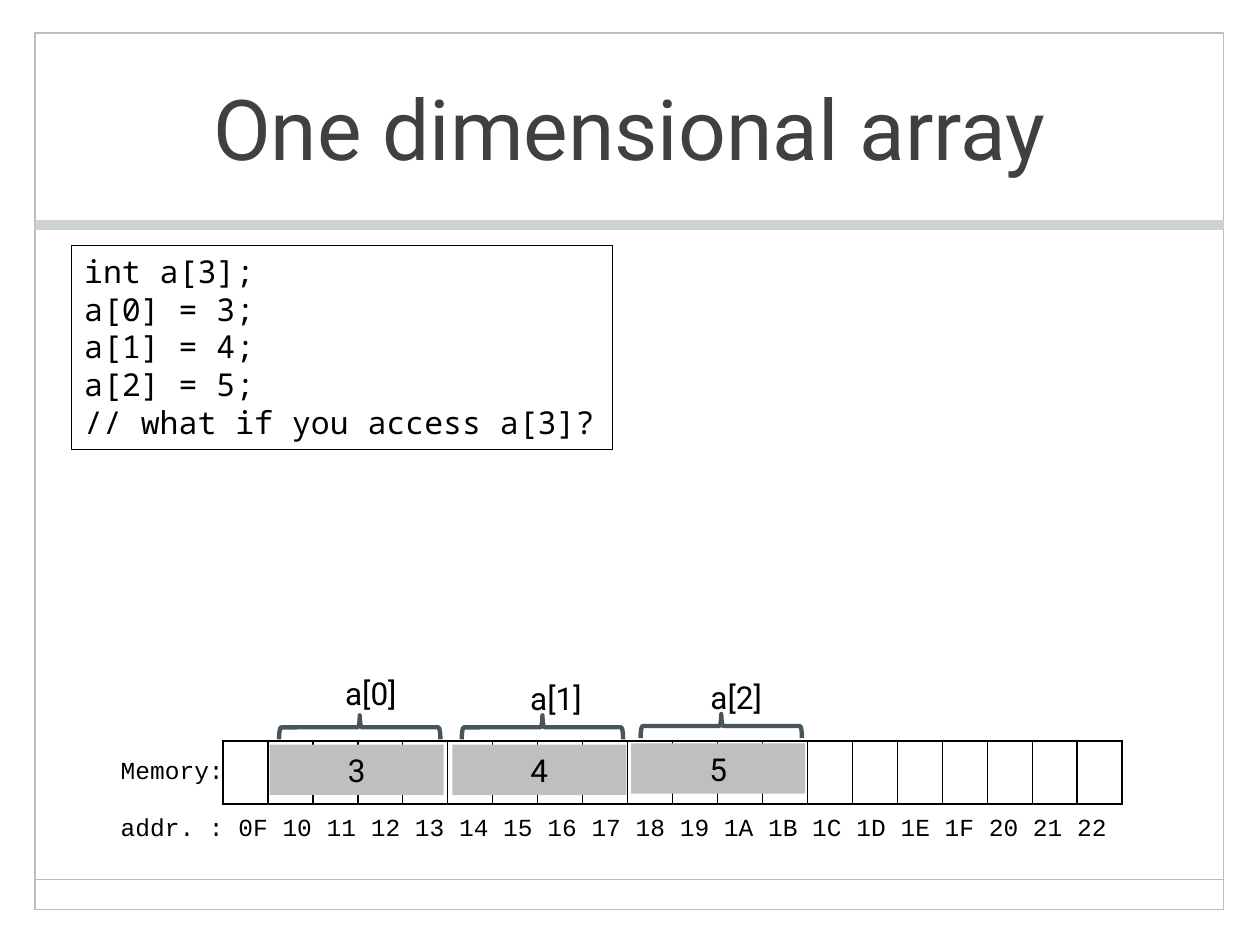
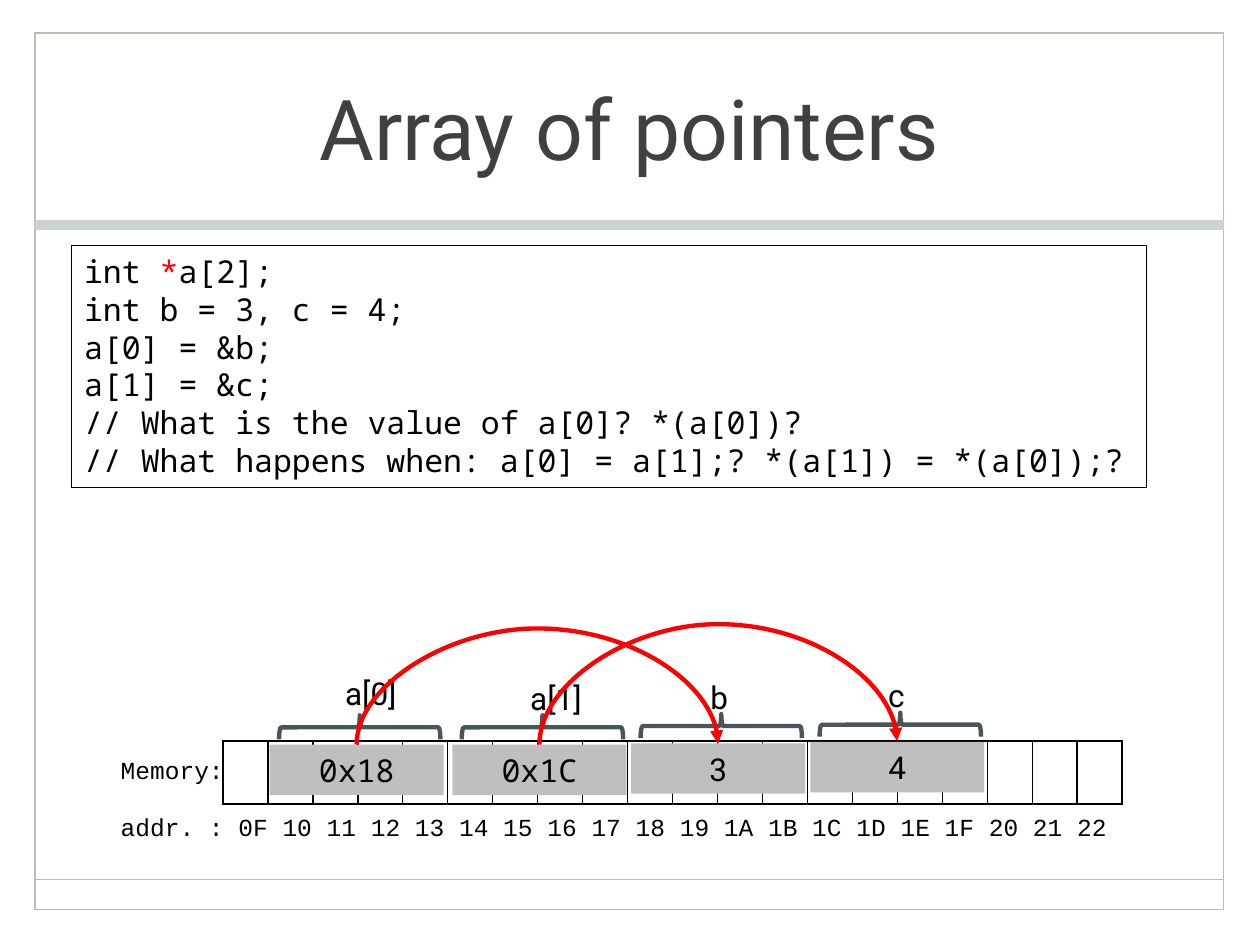
from dataclasses import dataclass

from lxml.etree import SubElement as Sub
from pptx import Presentation as Deck
from pptx.dml.color import RGBColor as Rgb
from pptx.enum.shapes import MSO_CONNECTOR as Conn, MSO_SHAPE as Kind
from pptx.enum.text import MSO_ANCHOR as Anchor, MSO_AUTO_SIZE as Fit, PP_ALIGN as Align
from pptx.oxml.ns import qn
from pptx.shapes.autoshape import Shape
from pptx.shapes.connector import Connector as Wire
from pptx.slide import Slide
from pptx.text.text import TextFrame as Frame
from pptx.util import Pt

SANS, MONO, TYPE = "Roboto", "Noto Sans Mono", "Courier New"
BLACK, RED, GRAY, DARK = "000000", "FF0000", "BFBFBF", "404040"
EDGE, BAND, RIM, SLATE = "BEBDB2", "CBD2D5", "D1D0C8", "48565C"
CELL, COLS = 25.7, 10
LEFT, TOP = 127.4, 423.4


@dataclass
class Slot:
    left: float
    top: float
    tag_x: float
    tag_y: float


@dataclass
class Item:
    tag: str
    value: str
    font: str = SANS


@dataclass
class Arc:
    x1: float
    x2: float
    base: float
    drop: float
    rise: float


@dataclass
class Page:
    title: str
    code: str
    width: float
    height: float
    items: list[Item]
    arcs: list[Arc]
    mark: str = ""


SLOTS = [
    Slot(154.1, 425.5, 190.1, 381.6),
    Slot(258.5, 425.5, 295.9, 384.5),
    Slot(360.7, 424.8, 398.9, 383.8),
    Slot(463, 424, 500.4, 383),
]

PAGES = [
    Page(
        "One dimensional array",
        "int a[3];\na[0] = 3;\na[1] = 4;\na[2] = 5;\n// what if you access a[3]?",
        309, 116.5,
        [Item("a[0]", "3"), Item("a[1]", "4"), Item("a[2]", "5")],
        [],
    ),
    Page(
        "Array of pointers",
        "int *a[2];\nint b = 3, c = 4;\na[0] = &b;\na[1] = &c;\n"
        "// What is the value of a[0]? *(a[0])?\n"
        "// What happens when: a[0] = a[1];? *(a[1]) = *(a[0]);?",
        614.2, 138.3,
        [Item("a[0]", "0x18", MONO), Item("a[1]", "0x1C", MONO),
         Item("b", "3"), Item("c", "4")],
        [Arc(203.8, 410.4, 425.5, 0.5, 65), Arc(308.2, 512.6, 425.5, 2, 68.4)],
        "*",
    ),
]


def tint(code: str) -> Rgb:
    return Rgb.from_string(code)


def write(frame: Frame, text: str, font: str, size: float,
          hue: str = BLACK, align: Align = Align.LEFT) -> None:
    frame.text = text
    for para in frame.paragraphs:
        para.alignment = align
        for run in para.runs:
            run.font.name, run.font.size = font, Pt(size)
            run.font.color.rgb = tint(hue)


def box(slide: Slide, kind: Kind, left: float, top: float, width: float,
        height: float, fill: str = "", line: str = "", weight: float = 1) -> Shape:
    shape = slide.shapes.add_shape(kind, Pt(left), Pt(top), Pt(width), Pt(height))
    shape.shadow.inherit = False
    if fill:
        shape.fill.solid()
        shape.fill.fore_color.rgb = tint(fill)
    else:
        shape.fill.background()
    if line:
        shape.line.color.rgb = tint(line)
        shape.line.width = Pt(weight)
    else:
        shape.line.fill.background()
    return shape


def label(slide: Slide, left: float, top: float, width: float, height: float,
          text: str, font: str, size: float) -> Frame:
    frame = slide.shapes.add_textbox(Pt(left), Pt(top), Pt(width), Pt(height)).text_frame
    write(frame, text, font, size)
    frame.word_wrap = False
    frame.auto_size = Fit.SHAPE_TO_FIT_TEXT
    return frame


def wire(slide: Slide, kind: Conn, x1: float, y1: float, x2: float, y2: float,
         hue: str, weight: float) -> Wire:
    link = slide.shapes.add_connector(kind, Pt(x1), Pt(y1), Pt(x2), Pt(y2))
    link.line.color.rgb = tint(hue)
    link.line.width = Pt(weight)
    Sub(link.element.spPr, qn("a:effectLst"))
    return link


def draw_base(slide: Slide, title: str) -> None:
    box(slide, Kind.RECTANGLE, 20.2, 18.7, 679, 501.1, line=EDGE)
    wire(slide, Conn.STRAIGHT, 20.2, 502.6, 699.2, 502.6, EDGE, 1)
    box(slide, Kind.RECTANGLE, 20.2, 126, 679, 5, BAND, RIM, 0.25)
    frame = slide.shapes.add_textbox(Pt(70.6), Pt(19.4), Pt(578.2), Pt(105.8)).text_frame
    frame.word_wrap = True
    frame.vertical_anchor = Anchor.MIDDLE
    write(frame, title, SANS, 48, DARK, Align.CENTER)


def draw_cells(slide: Slide, left: float) -> None:
    grid = slide.shapes.add_table(1, COLS, Pt(left), Pt(TOP), Pt(CELL * COLS), Pt(36)).table
    grid.first_row = grid.horz_banding = False
    for col in grid.columns:
        col.width = Pt(CELL)
    for cell in grid.iter_cells():
        props = cell._tc.get_or_add_tcPr()
        for side in ("lnL", "lnR", "lnT", "lnB"):
            edge = Sub(props, qn(f"a:{side}"), w=str(Pt(1)))
            Sub(Sub(edge, qn("a:solidFill")), qn("a:srgbClr"), val=BLACK)
        cell.fill.background()


def draw_store(slide: Slide) -> None:
    cells = [f"{spot:02X}" for spot in range(0x0F, 0x23)]
    frame = label(slide, 61.9, 427.7, 583.2, 58.3,
                  "Memory:\naddr. : " + " ".join(cells), TYPE, 14)
    frame.paragraphs[1].space_before = Pt(15.9)
    for part in range(2):
        draw_cells(slide, LEFT + part * CELL * COLS)


def draw_item(slide: Slide, slot: Slot, item: Item) -> None:
    block = box(slide, Kind.RECTANGLE, slot.left, slot.top, 99.4, 28.8, GRAY)
    write(block.text_frame, item.value, item.font, 18, align=Align.CENTER)
    brace = box(slide, Kind.LEFT_BRACE, slot.left + 44.6, slot.top - 56, 13.7, 92.2,
                line=SLATE, weight=2.5)
    brace.rotation = 90
    width = 44.6 if len(item.tag) > 1 else 23.6
    label(slide, slot.tag_x, slot.tag_y, width, 28.8, item.tag, SANS, 18)


def draw_code(slide: Slide, page: Page) -> None:
    frame = box(slide, Kind.RECTANGLE, 41, 140.4, page.width, page.height,
                line=BLACK, weight=0.75).text_frame
    frame.word_wrap = False
    frame.vertical_anchor = Anchor.TOP
    write(frame, page.code, MONO, 18)
    if page.mark:
        para = frame.paragraphs[0]
        parts = para.text.partition(page.mark)
        para.clear()
        for part in parts:
            run = para.add_run()
            run.text = part
            run.font.name, run.font.size = MONO, Pt(18)
            run.font.color.rgb = tint(RED if part == page.mark else BLACK)


def draw_arc(slide: Slide, arc: Arc) -> None:
    mid_x, mid_y = (arc.x1 + arc.x2) / 2, arc.base - arc.drop / 2
    half, span = arc.drop / 2, (arc.x2 - arc.x1) / 2
    link = wire(slide, Conn.CURVE, mid_x + half, mid_y + span,
                mid_x - half, mid_y - span, RED, 2.5)
    props = link.element.spPr
    props.find(qn("a:xfrm")).set("rot", "5400000")
    shape = props.find(qn("a:prstGeom"))
    guides = shape.find(qn("a:avLst"))
    if guides is None:
        guides = Sub(shape, qn("a:avLst"))
    ratio = round(arc.rise / arc.drop * 100000)
    Sub(guides, qn("a:gd"), name="adj1", fmla=f"val {ratio}")
    Sub(props.find(qn("a:ln")), qn("a:tailEnd"), type="triangle")


def main() -> None:
    deck = Deck()
    deck.slide_width, deck.slide_height = Pt(720), Pt(540)
    for page in PAGES:
        slide = deck.slides.add_slide(deck.slide_layouts[6])
        draw_base(slide, page.title)
        draw_store(slide)
        for slot, item in zip(SLOTS, page.items):
            draw_item(slide, slot, item)
        draw_code(slide, page)
        for arc in page.arcs:
            draw_arc(slide, arc)
    deck.save("out.pptx")


if __name__ == "__main__":
    main()
